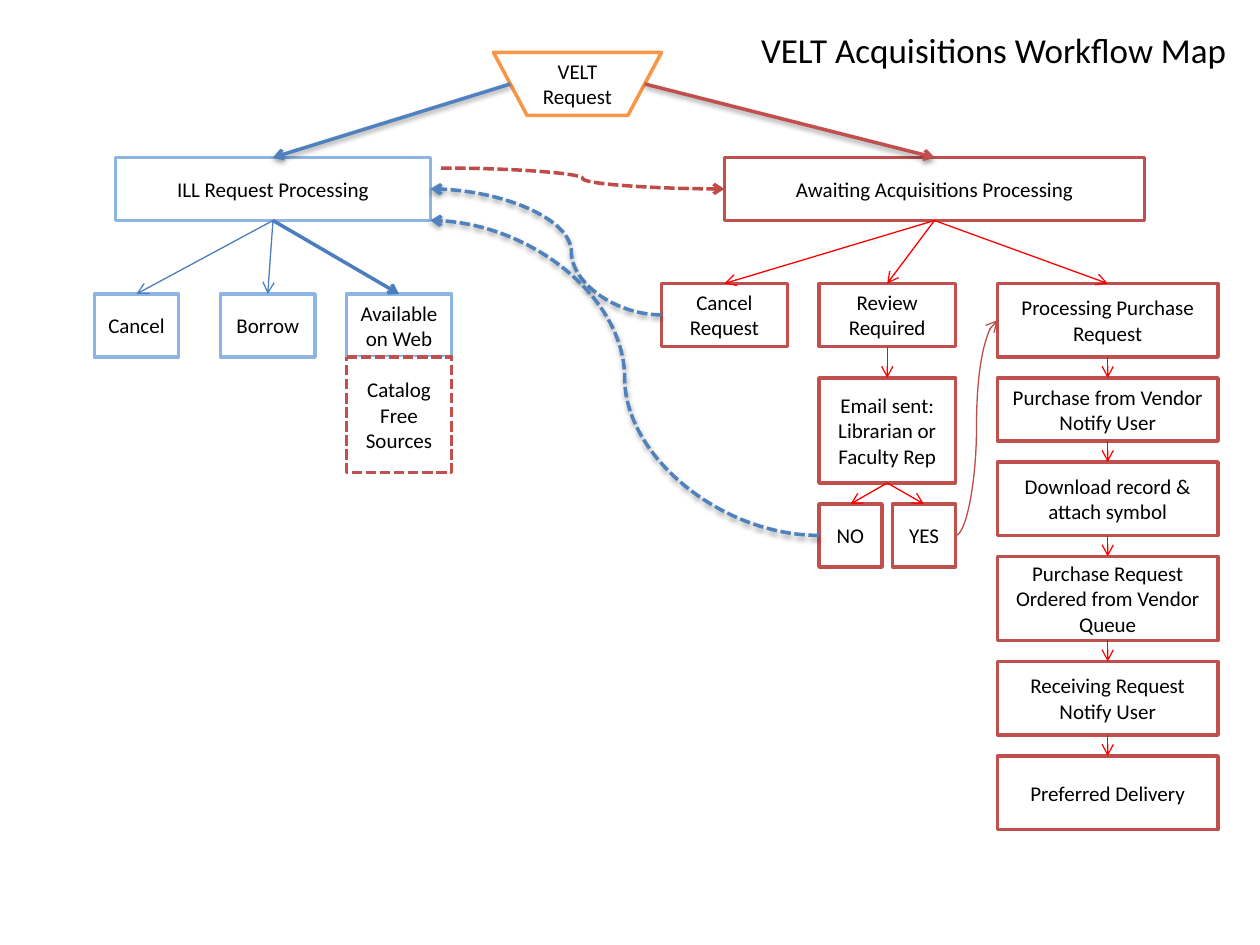
from itertools import pairwise

from lxml import etree
from pptx import Presentation
from pptx import util as u
from pptx.dml.color import RGBColor
from pptx.enum import dml, shapes, text
from pptx.oxml import ns

TOP, LEFT, BOTTOM, RIGHT = range(4)
SKY, BLUE, DEEP_BLUE = "8EB4E3", "4F81BD", "4B7EBC"
BRICK, DARK_BRICK, RED = "C0504D", "BF4C48", "FF0000"
DASHED = dml.MSO_LINE.SQUARE_DOT


def grid(units):
    return u.Cm(units * 2.54 / 12)


def paint(color_format, value):
    color_format.rgb = RGBColor.from_string(value)


def style_line(line, color, width, dash=None):
    paint(line.color, color)
    formats = {"width": u.Pt(width), "dash_style": dash}
    for name, value in formats.items():
        setattr(line, name, value)


def write(frame, words, size, align):
    formats = {"word_wrap": True, "vertical_anchor": text.MSO_ANCHOR.MIDDLE, "text": words}
    for name, value in formats.items():
        setattr(frame, name, value)
    for paragraph in frame.paragraphs:
        paragraph.alignment = align
        paragraph.font.name = "Calibri"
        paragraph.font.size = u.Pt(size)
        paint(paragraph.font.color, "000000")


def add_step(slide, words, box, color, dash=None, kind=shapes.MSO_SHAPE.FLOWCHART_PROCESS):
    step = slide.shapes.add_shape(kind, *map(grid, box))
    step.shadow.inherit = False
    step.fill.solid()
    paint(step.fill.fore_color, "FFFFFF")
    style_line(step.line, color, 2, dash)
    write(step.text_frame, words, 12, text.PP_ALIGN.CENTER)
    return step


def add_arrow(slide, start, end, color, width=0.75, dash=None, shadow=False, bend=None):
    kind = shapes.MSO_CONNECTOR.STRAIGHT if bend is None else shapes.MSO_CONNECTOR.CURVE
    arrow = slide.shapes.add_connector(kind, *start, *end)
    style_line(arrow.line, color, width, dash)
    properties = arrow._element.spPr
    etree.SubElement(properties.find(ns.qn("a:ln")), ns.qn("a:tailEnd"), type="arrow")
    effects = etree.SubElement(properties, ns.qn("a:effectLst"))
    if shadow:
        outer = etree.SubElement(effects, ns.qn("a:outerShdw"), blurRad="40000", dist="20000",
                                 dir="5400000", rotWithShape="0")
        black = etree.SubElement(outer, ns.qn("a:srgbClr"), val="000000")
        etree.SubElement(black, ns.qn("a:alpha"), val="38000")
    if bend is not None:
        guides = properties.find(ns.qn("a:prstGeom")).get_or_add_avLst()
        etree.SubElement(guides, ns.qn("a:gd"), name="adj1", fmla=f"val {round(bend * 100000)}")
    return arrow


def side(step, site):
    across, down = {TOP: (0.5, 0), LEFT: (0, 0.5), BOTTOM: (0.5, 1), RIGHT: (1, 0.5)}[site]
    return u.Emu(int(step.left + across * step.width)), u.Emu(int(step.top + down * step.height))


def flow_down(slide, source, target, color, width=0.75):
    arrow = add_arrow(slide, side(source, BOTTOM), side(target, TOP), color, width)
    arrow.begin_connect(source, BOTTOM)
    arrow.end_connect(target, TOP)


def add_title(slide, box):
    title = slide.shapes.add_textbox(*map(grid, box))
    write(title.text_frame, "VELT Acquisitions Workflow Map", 20, text.PP_ALIGN.RIGHT)


def add_loan_branch(slide, box):
    left, top, width, height = box
    header = add_step(slide, "ILL Request Processing", (left + 2, top, 30, 6), SKY)
    outcomes = [("Cancel", 0, 8, 0.75), ("Borrow", 12, 9, 0.75), ("Available on Web", 24, 10, 2)]
    for words, offset, span, weight in outcomes:
        outcome = add_step(slide, words, (left + offset, top + 13, span, 6), SKY)
        flow_down(slide, header, outcome, DEEP_BLUE, weight)
    add_step(slide, "Catalog\nFree Sources", (left + width - 10, top + 19, 10, height - 19),
             BRICK, DASHED)
    return header


def add_purchase_column(slide, box):
    left, top, width, _ = box
    stages = [
        ("Processing Purchase Request", 7),
        ("Purchase from Vendor\nNotify User", 6),
        ("Download record & attach symbol", 7),
        ("Purchase Request Ordered from Vendor Queue", 8),
        ("Receiving Request\nNotify User", 7),
        ("Preferred Delivery", 7),
    ]
    steps = []
    for words, height in stages:
        steps.append(add_step(slide, words, (left, top, width, height), BRICK))
        top += height + 2
    for source, target in pairwise(steps):
        flow_down(slide, source, target, RED)
    return steps[0]


def add_acquisitions_branch(slide, box):
    left, top, width, height = box
    plan = {
        "header": ("Awaiting Acquisitions Processing", 6, 0, 40, 6),
        "cancel": ("Cancel Request", 0, 12, 12, 6),
        "review": ("Review Required", 15, 12, 13, 6),
        "email": ("Email sent:\nLibrarian or Faculty Rep", 15, 21, 13, 10),
        "no": ("NO", 15, 33, 6, 6),
        "yes": ("YES", 22, 33, 6, 6),
    }
    steps = {name: add_step(slide, words, (left + x, top + y, w, h), BRICK)
             for name, (words, x, y, w, h) in plan.items()}
    steps["purchase"] = add_purchase_column(slide, (left + 32, top + 12, width - 32, height - 12))
    routes = [("header", "cancel"), ("header", "review"), ("header", "purchase"),
              ("review", "email"), ("email", "no"), ("email", "yes")]
    for source, target in routes:
        flow_down(slide, steps[source], steps[target], RED)
    add_arrow(slide, side(steps["yes"], RIGHT), side(steps["purchase"], LEFT), DARK_BRICK, bend=0.5)
    return steps


def add_request(slide, box, loan, awaiting):
    left, top, width, height = box
    add_step(slide, "VELT Request", box, "F79646",
             kind=shapes.MSO_SHAPE.FLOWCHART_MANUAL_OPERATION)
    for share, target, color in ((0.1, loan, BLUE), (0.9, awaiting, BRICK)):
        start = grid(left + share * width), grid(top + height / 2)
        arrow = add_arrow(slide, start, side(target, TOP), color, 2, shadow=True)
        arrow.end_connect(target, TOP)


def add_crossovers(slide, loan, steps):
    loan_right, loan_middle = side(loan, RIGHT)
    loan_corner = loan_right, loan.top + loan.height
    add_arrow(slide, side(steps["cancel"], LEFT), (loan_right, loan_middle), BLUE, 2,
              DASHED, True, 0.39)
    add_arrow(slide, side(steps["no"], LEFT), loan_corner, BLUE, 2, DASHED, True, 0.5)
    add_arrow(slide, (loan_right + grid(1), loan.top + grid(1)), side(steps["header"], LEFT),
              DARK_BRICK, 2, DASHED, bend=0.5)


def main():
    deck = Presentation()
    deck.slide_width, deck.slide_height = u.Cm(25.4), u.Cm(19.05)
    slide = deck.slides.add_slide(deck.slide_layouts[6])
    add_title(slide, (10, 2, 108, 5.4))
    loan = add_loan_branch(slide, (9, 15, 34, 30))
    steps = add_acquisitions_branch(slide, (63, 15, 53, 64))
    add_request(slide, (47, 5, 16, 6), loan, steps["header"])
    add_crossovers(slide, loan, steps)
    deck.save("out.pptx")


if __name__ == "__main__":
    main()
